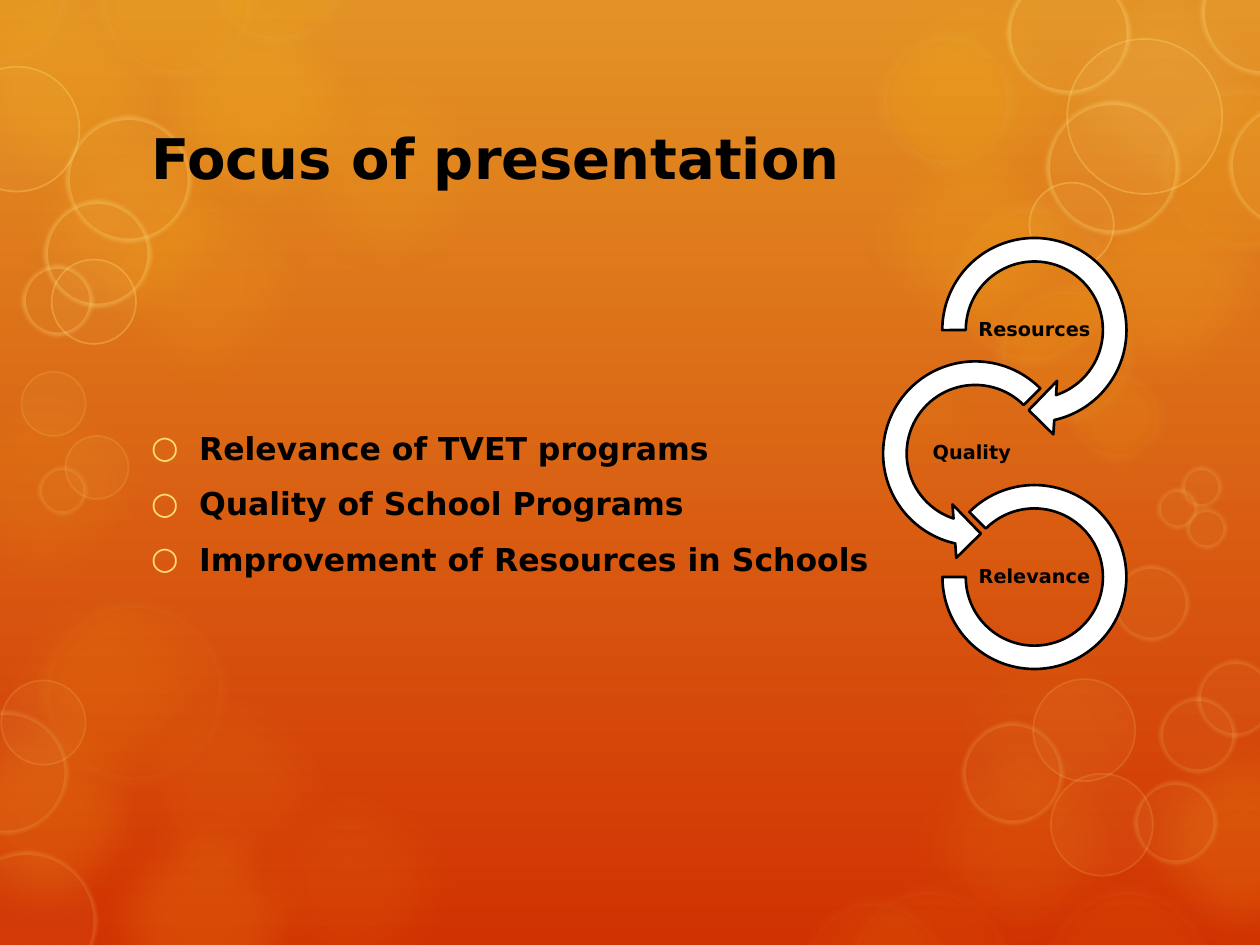
from lxml import etree
from pptx import Presentation
from pptx import util as u
from pptx.dml import color
from pptx.enum import shapes, text
from pptx.oxml import ns

WIDTH, HEIGHT = 10, 7.5
FONT = "DejaVu Sans"
AMBER, CREAM, BUTTER = "FDC61B", "FEEBAE", "FFE281"

GLOWS = [
    (-0.25, 4.42, 2.09, 8), (0.57, 1.2, 2.09, 10), (2.05, 0.31, 2.09, 10),
    (0.57, 6.27, 2.09, 16), (-0.55, -0.32, 2.09, 14), (1.01, -0.18, 2.09, 20),
    (0, 0.72, 2.09, 15), (6.69, -0.29, 2.09, 10), (8.2, 1.2, 2.09, 15),
    (8.81, 5.62, 2.09, 16), (7.29, 4.77, 2.09, 5), (-0.68, 5.41, 2.09, 16),
    (0.77, 5.24, 2.09, 8), (6.69, 0.86, 2.09, 15), (7.06, 5.62, 2.09, 10),
    (1.73, 5.96, 2.09, 8), (-0.69, 2.82, 2.09, 8), (6.75, 2.62, 1.33, 10),
]
RINGS = [
    (AMBER, 10, CREAM, 14, 6, 10, [
        (9.18, 0.65, 1.37), (6.94, 0.23, 1.14), (7.52, 1.59, 1.33),
        (7.89, 2.24, 1.14), (8.47, 2.91, 0.79), (0.75, -0.65, 1.3),
        (1.64, -0.74, 1.13), (-0.57, -0.58, 1.14)]),
    (AMBER, 6, CREAM, 14, 4, 10, [
        (0.3, 4.73, 1.53), (6.32, 7.1, 1.24), (6.7, 7.01, 1.36), (8.28, 7.01, 1.34)]),
    (BUTTER, 5, BUTTER, 5, 15, 2.5, [
        (-0.35, 6.75, 1.12), (-0.44, 5.64, 0.98), (7.63, 5.73, 0.81), (9, 6.2, 0.66),
        (8.83, 4.48, 0.61), (9.2, 5.53, 0.61), (9.5, 5.24, 0.61), (9.37, 3.7, 0.33),
        (9.18, 3.87, 0.33), (9.41, 4.03, 0.33), (0.3, 3.7, 0.39)]),
    (BUTTER, 5, BUTTER, 5, 30, 2.5, [
        (0.52, 0.92, 1), (0.35, 1.59, 0.85), (0.17, 2.1, 0.57), (7.99, -0.23, 0.98),
        (9.53, -0.4, 1), (9.75, 0.82, 0.99), (8.3, 0.8, 1.06)]),
    (BUTTER, 5, BUTTER, 1, 15, 0, [
        (0.01, 5.4, 0.67), (8.34, 6.14, 0.81), (8.2, 5.39, 0.81),
        (0.17, 2.95, 0.51), (0.52, 3.46, 0.5)]),
    (BUTTER, 5, BUTTER, 1, 30, 0, [
        (-0.36, 0.53, 0.99), (0.41, 2.06, 0.67), (8.47, 0.31, 1.23), (8.17, 1.45, 0.67)]),
]


def paint(fill, value, alpha=100):
    """Fill with a hex colour at a percentage of opacity."""
    fill.solid()
    fill.fore_color.rgb = color.RGBColor.from_string(value)
    if alpha < 100:
        tone = fill._xPr.find(".//" + ns.qn("a:srgbClr"))
        etree.SubElement(tone, ns.qn("a:alpha"), val=str(alpha * 1000))


def style_font(font, size):
    """Give a font the bold black style of the slide."""
    font.name, font.size, font.bold = FONT, u.Pt(size), True
    paint(font.fill, "000000")


def place(shape, box):
    """Move a shape to a box given in inches."""
    shape.left, shape.top, shape.width, shape.height = map(u.Inches, box)


def add_bubble(slide, circle, tint, alpha, soft, rim=None):
    """Add a translucent bubble with soft edges and an optional rim."""
    left, top, size = circle
    bubble = slide.shapes.add_shape(
        shapes.MSO_SHAPE.OVAL, *map(u.Inches, (left, top, size, size)))
    bubble.element.remove(bubble.element.find(ns.qn("p:style")))
    paint(bubble.fill, tint, alpha)
    if rim:
        rim_tint, width, rim_alpha = rim
        bubble.line.width = u.Pt(width)
        paint(bubble.line.fill, rim_tint, rim_alpha)
    else:
        bubble.line.fill.background()
    bubble.shadow.inherit = False
    if soft:
        effects = bubble.element.spPr.find(ns.qn("a:effectLst"))
        etree.SubElement(effects, ns.qn("a:softEdge"), rad=str(u.Pt(soft)))
    return bubble


def add_backdrop(slide, master):
    """Set the gradient and put the bubbles on the master."""
    fill = slide.background.fill
    fill.gradient()
    fill.gradient_angle = 270
    for stop, tone in zip(fill.gradient_stops, ("E39325", "D13202")):
        stop.color.rgb = color.RGBColor.from_string(tone)
    bubbles = [add_bubble(slide, circle, AMBER, alpha, 25) for *circle, alpha in GLOWS]
    bubbles.append(add_bubble(slide, (8.2, -0.32, 2.09), BUTTER, 10, 25))
    for tint, alpha, rim_tint, width, rim_alpha, soft, circles in RINGS:
        bubbles += [add_bubble(slide, circle, tint, alpha, soft, (rim_tint, width, rim_alpha))
                    for circle in circles]
    for order, bubble in enumerate(bubbles):
        bubble.element.nvSpPr.cNvPr.set("id", str(100 + order))
        master.shapes.element.insert(2 + order, bubble.element)


def fill_title(title, box, heading):
    """Write the heading in the title placeholder."""
    place(title, box)
    frame = title.text_frame
    frame.text = heading
    frame.vertical_anchor = text.MSO_ANCHOR.MIDDLE
    frame.paragraphs[0].alignment = text.PP_ALIGN.LEFT
    style_font(frame.paragraphs[0].font, 32)


def fill_list(body, box, points):
    """Write the points as a list with round bullets."""
    place(body, box)
    frame = body.text_frame
    frame.text = "\n".join(points)
    frame.auto_size = text.MSO_AUTO_SIZE.NONE
    frame.vertical_anchor = text.MSO_ANCHOR.MIDDLE
    frame.margin_bottom = u.Inches(0.45)
    for point in frame.paragraphs:
        point.space_before, point.space_after = u.Pt(4), u.Pt(6)
        layout = point._p.get_or_add_pPr()
        layout.set("marL", str(u.Inches(0.38)))
        layout.set("indent", str(u.Inches(-0.38)))
        tint = etree.SubElement(layout, ns.qn("a:buClr"))
        etree.SubElement(tint, ns.qn("a:srgbClr"), val="FEDD78")
        etree.SubElement(layout, ns.qn("a:buFont"), typeface=FONT)
        etree.SubElement(layout, ns.qn("a:buChar"), char="○")
        style_font(point.font, 18)


def add_chain(slide, left, top, cell, shift, step):
    """Add three linked arcs with labels, alternating between two columns."""
    kinds = shapes.MSO_SHAPE
    links = [
        ("Resources", kinds.CIRCULAR_ARROW, 1, 0, (0.11, 11.42, 45, 108, 0.125)),
        ("Quality ", kinds.LEFT_CIRCULAR_ARROW, 0, 0, (0.11, 11.42, 63, 189, 0.125)),
        ("Relevance ", kinds.BLOCK_ARC, 1, 0.12, (135, 108, 0.127)),
    ]
    chain = slide.shapes.add_group_shape()
    for row, (label, kind, column, inset, bends) in enumerate(links):
        x, y, size = left + column * shift, top + row * step, cell - 2 * inset
        arc = chain.shapes.add_shape(
            kind, *map(u.Inches, (x + inset, y + inset, size, size)))
        for index, bend in enumerate(bends):
            arc.adjustments[index] = bend
        paint(arc.fill, "FFFFFF")
        paint(arc.line.fill, "000000")
        arc.line.width = u.Pt(1.5)
        arc.shadow.inherit = False
        wide, high = 0.95, 0.47
        caption = chain.shapes.add_textbox(*map(u.Inches, (
            x + (cell - wide) / 2, y + (cell - high) / 2, wide, high)))
        frame = caption.text_frame
        frame.text = label
        frame.word_wrap = True
        frame.vertical_anchor = text.MSO_ANCHOR.MIDDLE
        frame.margin_left = frame.margin_right = u.Inches(0.01)
        frame.margin_top = frame.margin_bottom = u.Inches(0.01)
        frame.paragraphs[0].alignment = text.PP_ALIGN.CENTER
        frame.paragraphs[0].line_spacing = 0.9
        style_font(frame.paragraphs[0].font, 11)


def main():
    """Build the slide and save it."""
    deck = Presentation()
    deck.slide_width, deck.slide_height = u.Inches(WIDTH), u.Inches(HEIGHT)
    slide = deck.slides.add_slide(deck.slide_layouts[1])
    add_backdrop(slide, deck.slide_master)
    title, body = slide.placeholders
    fill_title(title, (1.1, 0.74, 7.79, 1.01), "Focus of presentation")
    fill_list(body, (1.1, 1.98, 7.79, 4.43), [
        "Relevance of TVET programs",
        "Quality of School Programs",
        "Improvement of Resources in Schools"])
    add_chain(slide, 6.89, 1.77, cell=1.7, shift=0.47, step=0.98)
    deck.save("out.pptx")


if __name__ == "__main__":
    main()
